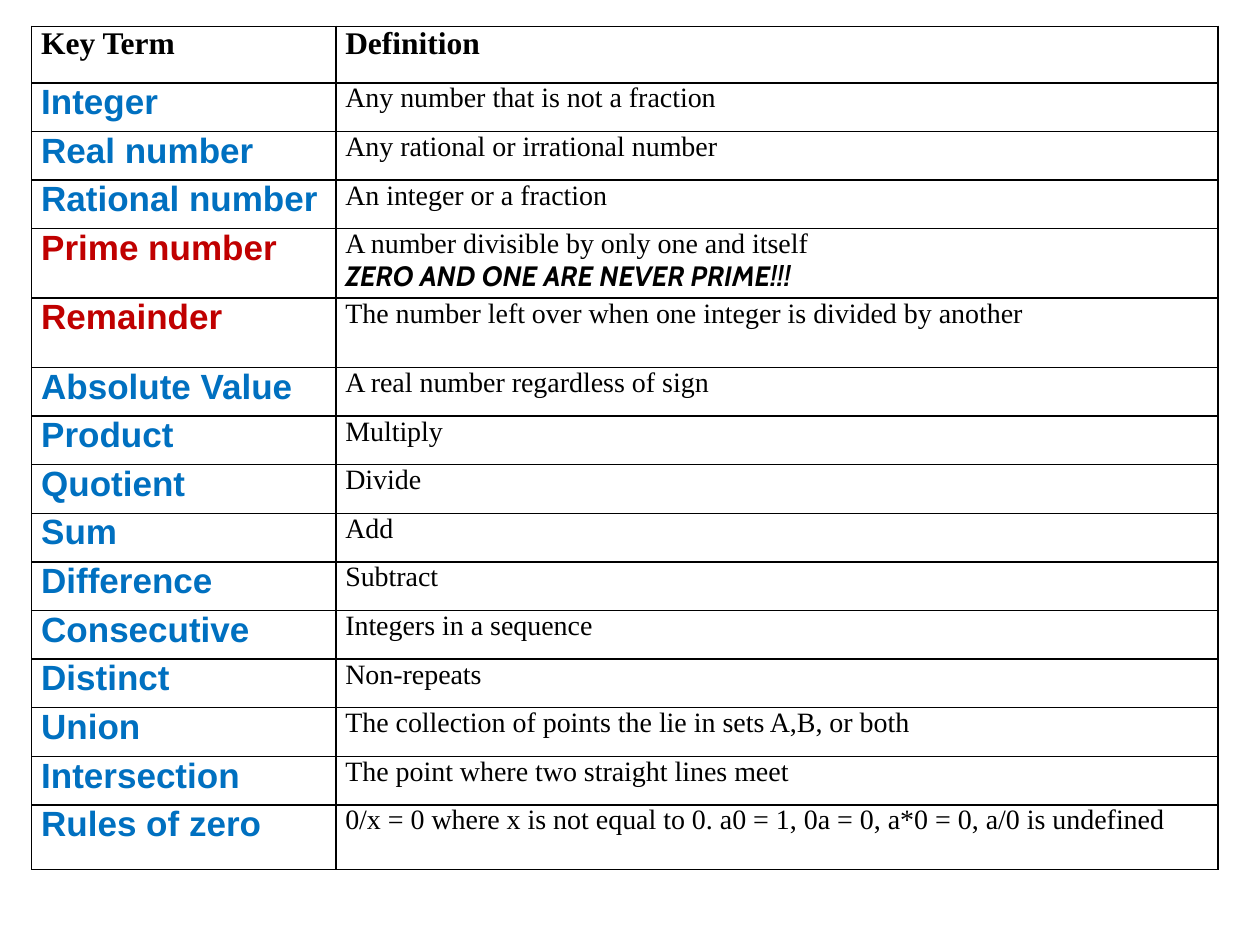
import pptx
import pptx.dml.color
import pptx.oxml
import pptx.oxml.ns
import pptx.util

BLACK, BLUE, RED = "000000", "0070C0", "C00000"
SERIF = "Times New Roman"
HEADINGS = ("Key Term", "Definition")
COLUMN_WIDTHS = (6.13, 17.78)
HEADER_HEIGHT, ROW_HEIGHT, TALL_HEIGHT, LAST_HEIGHT = 1.14, 0.98, 1.4, 1.3
TERMS = [
    ("Integer", "Any number that is not a fraction"),
    ("Real number", "Any rational or irrational number"),
    ("Rational number", "An integer or a fraction"),
    ("Prime number", "A number divisible by only one and itself"),
    ("Remainder", "The number left over when one integer is divided by another"),
    ("Absolute Value", "A real number regardless of sign"),
    ("Product", "Multiply"),
    ("Quotient", "Divide"),
    ("Sum", "Add"),
    ("Difference", "Subtract"),
    ("Consecutive", "Integers in a sequence"),
    ("Distinct", "Non-repeats"),
    ("Union", "The collection of points the lie in sets A,B, or both"),
    ("Intersection", "The point where two straight lines meet"),
    ("Rules of zero", "0/x = 0 where x is not equal to 0. a0 = 1, 0a = 0, a*0 = 0, a/0 is undefined"),
]
HIGHLIGHTED = ("Prime number", "Remainder")
WARNINGS = {"Prime number": "ZERO AND ONE ARE NEVER PRIME!!!"}


def color(value):
    return pptx.dml.color.RGBColor.from_string(value)


def add_text(paragraph, text, size, font_name=SERIF, text_color=BLACK, bold=False, italic=False):
    run = paragraph.add_run()
    run.text = text
    font = run.font
    font.size = pptx.util.Pt(size)
    font.name = font_name
    font.bold = bold
    font.italic = italic
    font.color.rgb = color(text_color)


def format_cell(cell):
    cell.margin_left = cell.margin_right = pptx.util.Cm(0.19)
    cell.margin_top = cell.margin_bottom = 0
    properties = cell._tc.get_or_add_tcPr()
    for side in ("lnL", "lnR", "lnT", "lnB"):
        properties.append(pptx.oxml.parse_xml(
            f'<a:{side} {pptx.oxml.ns.nsdecls("a")} w="{pptx.util.Pt(1)}">'
            f'<a:solidFill><a:srgbClr val="{BLACK}"/></a:solidFill></a:{side}>'))
    cell.fill.background()


def fill_term_row(term_cell, definition_cell, term, definition):
    term_color = RED if term in HIGHLIGHTED else BLUE
    add_text(term_cell.text_frame.paragraphs[0], term, 20, "Arial", term_color, bold=True)
    frame = definition_cell.text_frame
    add_text(frame.paragraphs[0], definition, 16)
    if term in WARNINGS:
        add_text(frame.add_paragraph(), WARNINGS[term], 16, "Cabin", bold=True, italic=True)


def add_glossary(slide, left, top):
    heights = [TALL_HEIGHT if term in HIGHLIGHTED else ROW_HEIGHT for term, _ in TERMS]
    heights = [HEADER_HEIGHT] + heights[:-1] + [LAST_HEIGHT]
    table = slide.shapes.add_table(
        len(heights), len(COLUMN_WIDTHS), pptx.util.Cm(left), pptx.util.Cm(top),
        pptx.util.Cm(sum(COLUMN_WIDTHS)), pptx.util.Cm(sum(heights))).table
    table.horz_banding = False
    for column, width in zip(table.columns, COLUMN_WIDTHS):
        column.width = pptx.util.Cm(width)
    for row, height in zip(table.rows, heights):
        row.height = pptx.util.Cm(height)
    for cell in table.iter_cells():
        format_cell(cell)
    for column_index, heading in enumerate(HEADINGS):
        paragraph = table.cell(0, column_index).text_frame.paragraphs[0]
        add_text(paragraph, heading, 18, bold=True)
    for row_index, (term, definition) in enumerate(TERMS, start=1):
        fill_term_row(table.cell(row_index, 0), table.cell(row_index, 1), term, definition)


def main():
    presentation = pptx.Presentation()
    presentation.slide_width = pptx.util.Cm(25.4)
    presentation.slide_height = pptx.util.Cm(19.05)
    slide = presentation.slides.add_slide(presentation.slide_layouts[6])
    add_glossary(slide, 0.64, 0.53)
    presentation.save("out.pptx")


if __name__ == "__main__":
    main()
